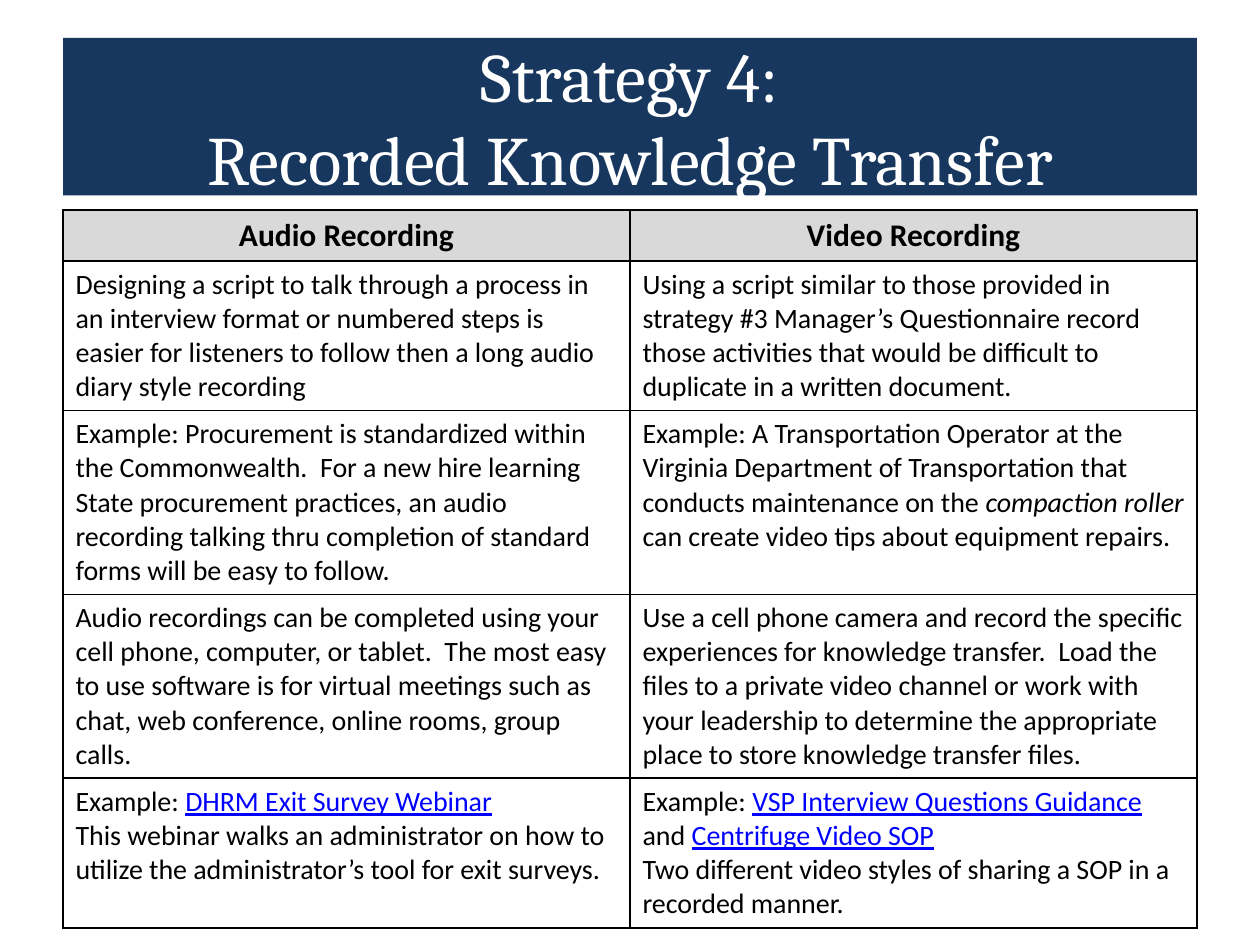
from lxml import etree
from pptx import Presentation
from pptx.dml.color import RGBColor
from pptx.enum import text
from pptx.oxml import ns
from pptx.util import Pt

NAVY = RGBColor(0x17, 0x37, 0x5E)
WHITE = RGBColor(0xFF, 0xFF, 0xFF)
BLACK = RGBColor(0, 0, 0)
GREY = RGBColor(0xD9, 0xD9, 0xD9)
LINK_BLUE = RGBColor(0, 0, 0xFF)

LEFT, WIDTH = 36, 648
ROW_HEIGHTS = [29, 85, 105, 105, 85]
HEADINGS = ["Audio Recording", "Video Recording"]

PLAIN, ITALIC, LINK = "plain", "italic", "link"

BODY_ROWS = [
    [
        [[("Designing a script to talk through a process in an interview format or "
           "numbered steps is easier for listeners to follow then a long audio diary "
           "style recording", PLAIN)]],
        [[("Using a script similar to those provided in strategy #3 Manager’s "
           "Questionnaire record those activities that would be difficult to "
           "duplicate in a written document.", PLAIN)]],
    ],
    [
        [[("Example: Procurement is standardized within the Commonwealth.  For a new "
           "hire learning State procurement practices, an audio recording talking "
           "thru completion of standard forms will be easy to follow.", PLAIN)]],
        [[("Example: A Transportation Operator at the Virginia Department of "
           "Transportation that conducts maintenance on the ", PLAIN),
          ("compaction roller ", ITALIC),
          ("can create video tips about equipment repairs.", PLAIN)]],
    ],
    [
        [[("Audio recordings can be completed using your cell phone, computer, or "
           "tablet.  The most easy to use software is for virtual meetings such as "
           "chat, web conference, online rooms, group calls.", PLAIN)]],
        [[("Use a cell phone camera and record the specific experiences for knowledge "
           "transfer.  Load the files to a private video channel or work with your "
           "leadership to determine the appropriate place to store knowledge transfer "
           "files.", PLAIN)]],
    ],
    [
        [[("Example: ", PLAIN), ("DHRM Exit Survey Webinar", LINK)],
         [("This webinar walks an administrator on how to utilize the "
           "administrator’s tool for exit surveys.", PLAIN)]],
        [[("Example: ", PLAIN), ("VSP Interview Questions Guidance ", LINK),
          ("and ", PLAIN), ("Centrifuge Video SOP", LINK)],
         [("Two different video styles of sharing a SOP in a recorded manner.", PLAIN)]],
    ],
]


def add_run(paragraph, content, size, color, name="Calibri", bold=False):
    run = paragraph.add_run()
    run.text = content
    run.font.name = name
    run.font.size = Pt(size)
    run.font.bold = bold
    run.font.color.rgb = color
    return run


def format_title(title, lines):
    title.left, title.top = Pt(LEFT), Pt(21.6)
    title.width, title.height = Pt(WIDTH), Pt(90)
    title.fill.solid()
    title.fill.fore_color.rgb = NAVY
    frame = title.text_frame
    frame.auto_size = text.MSO_AUTO_SIZE.NONE
    frame.vertical_anchor = text.MSO_ANCHOR.MIDDLE
    paragraph = frame.paragraphs[0]
    paragraph.alignment = text.PP_ALIGN.CENTER
    for index, line in enumerate(lines):
        if index:
            paragraph.add_line_break()
        add_run(paragraph, line, 39.6, WHITE, "Cambria")


def add_borders(cell):
    properties = cell._tc.get_or_add_tcPr()
    for index, side in enumerate(("lnL", "lnR", "lnT", "lnB")):
        line = etree.Element(ns.qn(f"a:{side}"), w=str(Pt(1)))
        fill = etree.SubElement(line, ns.qn("a:solidFill"))
        etree.SubElement(fill, ns.qn("a:srgbClr"), val=str(BLACK))
        properties.insert(index, line)


def fill_heading_cell(cell, heading):
    cell.fill.solid()
    cell.fill.fore_color.rgb = GREY
    paragraph = cell.text_frame.paragraphs[0]
    paragraph.alignment = text.PP_ALIGN.CENTER
    add_run(paragraph, heading, 18, BLACK, bold=True)


def fill_body_cell(cell, paragraphs):
    cell.fill.background()
    frame = cell.text_frame
    for index, runs in enumerate(paragraphs):
        paragraph = frame.add_paragraph() if index else frame.paragraphs[0]
        for content, style in runs:
            run = add_run(paragraph, content, 16, LINK_BLUE if style == LINK else BLACK)
            run.font.italic = style == ITALIC
            run.font.underline = style == LINK


def add_recording_table(slide):
    frame = slide.shapes.add_table(len(ROW_HEIGHTS), len(HEADINGS), Pt(LEFT), Pt(120),
                                   Pt(WIDTH), Pt(sum(ROW_HEIGHTS)))
    table = frame.table
    for row, height in zip(table.rows, ROW_HEIGHTS):
        row.height = Pt(height)
    for column, heading in enumerate(HEADINGS):
        fill_heading_cell(table.cell(0, column), heading)
    for row_index, contents in enumerate(BODY_ROWS, start=1):
        for column, paragraphs in enumerate(contents):
            fill_body_cell(table.cell(row_index, column), paragraphs)
    for cell in table.iter_cells():
        add_borders(cell)


def main():
    presentation = Presentation()
    presentation.slide_width, presentation.slide_height = Pt(720), Pt(540)
    slide = presentation.slides.add_slide(presentation.slide_layouts[5])
    format_title(slide.shapes.title, ["Strategy 4:", "Recorded Knowledge Transfer"])
    add_recording_table(slide)
    presentation.save("out.pptx")


if __name__ == "__main__":
    main()
